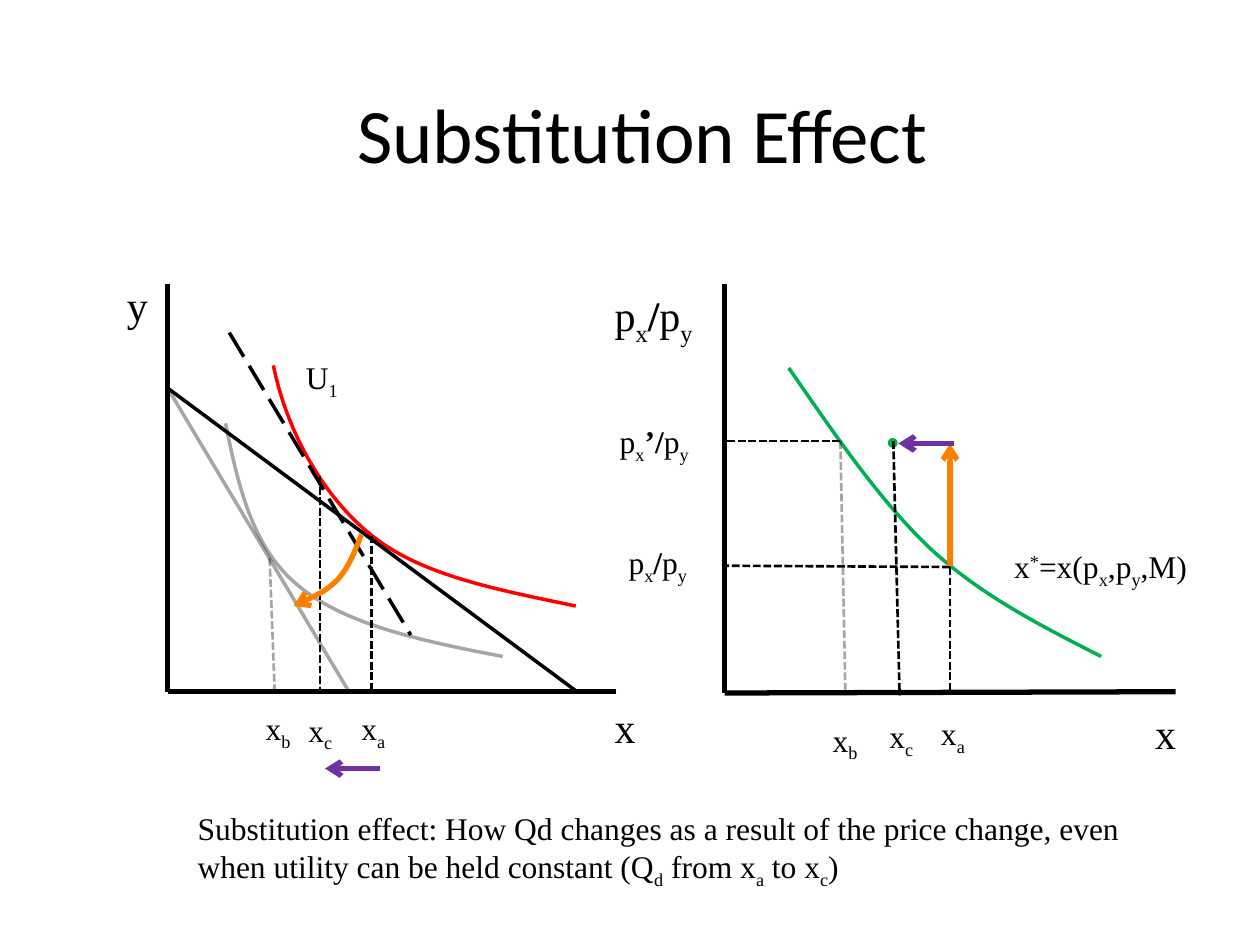
from dataclasses import dataclass
from typing import Optional

from lxml import etree
from pptx import Presentation
from pptx import util as u
from pptx.dml import color
from pptx.enum import dml, shapes, text
from pptx.oxml import ns


@dataclass(frozen=True)
class Theme:
    ink: str = "000000"
    utility: str = "FF0000"
    demand: str = "00B050"
    price: str = "FE7F00"
    quantity: str = "7030A0"
    heading_font: str = "Calibri"
    body_font: str = "Times New Roman"
    heading: int = 44
    axis: int = 24
    body: int = 18
    subscript: int = -25000
    superscript: int = 30000


THEME = Theme()
DOTS = dml.MSO_LINE.SQUARE_DOT
DASHES = dml.MSO_LINE.LONG_DASH


@dataclass(frozen=True)
class Stroke:
    color: str = THEME.ink
    width: float = 2
    dash: Optional[dml.MSO_LINE] = None
    opacity: int = 100
    arrow: bool = False


AXIS = Stroke(width=3)
PLAIN = Stroke()
FADED = Stroke(opacity=35)
GUIDE = Stroke(width=1.5, dash=DOTS)
FADED_GUIDE = Stroke(width=1.5, dash=DOTS, opacity=35)
COMPENSATED = Stroke(dash=DASHES)
UTILITY = Stroke(THEME.utility)
DEMAND = Stroke(THEME.demand)
PRICE_MOVE = Stroke(THEME.price, 3, arrow=True)
QUANTITY_MOVE = Stroke(THEME.quantity, 3, arrow=True)


@dataclass(frozen=True)
class Segment:
    start: tuple[float, float]
    end: tuple[float, float]
    stroke: Stroke


@dataclass(frozen=True)
class Curve:
    points: list[tuple[float, float]]
    stroke: Stroke


@dataclass(frozen=True)
class Label:
    markup: str
    left: float
    top: float
    width: float
    height: float = 0.4
    size: int = THEME.body
    wrap: bool = False


SEGMENTS = [
    Segment((1.33, 2.25), (1.33, 5.49), AXIS),
    Segment((4.89, 5.49), (1.33, 5.49), AXIS),
    Segment((5.75, 2.25), (5.75, 5.5), AXIS),
    Segment((9.33, 5.49), (5.75, 5.5), AXIS),
    Segment((1.33, 3.08), (4.58, 5.49), PLAIN),
    Segment((1.33, 3.08), (2.77, 5.49), FADED),
    Segment((2.95, 4.25), (2.95, 5.47), GUIDE),
    Segment((2.14, 4.43), (2.18, 5.49), FADED_GUIDE),
    Segment((7.54, 4.5), (7.54, 5.5), GUIDE),
    Segment((6.67, 3.5), (6.71, 5.52), FADED_GUIDE),
    Segment((6.67, 3.5), (5.75, 3.5), GUIDE),
    Segment((7.54, 4.5), (5.75, 4.49), GUIDE),
    Segment((7.54, 4.49), (7.54, 3.52), PRICE_MOVE),
    Segment((7.57, 3.52), (7.13, 3.52), QUANTITY_MOVE),
    Segment((3.02, 6.1), (2.58, 6.1), QUANTITY_MOVE),
    Segment((1.82, 2.64), (3.26, 5.04), COMPENSATED),
    Segment((2.54, 3.78), (2.54, 5.47), GUIDE),
    Segment((7.09, 3.5), (7.14, 5.52), GUIDE),
]

CURVES = [
    Curve([(1.79, 3.36), (1.89, 3.85), (2, 4.35), (2.37, 4.65),
           (2.74, 4.96), (3.36, 5.09), (3.99, 5.21)], FADED),
    Curve([(2.17, 2.9), (2.27, 3.4), (2.55, 3.93), (2.95, 4.25),
           (3.35, 4.57), (3.95, 4.68), (4.57, 4.81)], UTILITY),
    Curve([(6.26, 2.92), (6.62, 3.44), (6.97, 3.96), (7.38, 4.35),
           (7.79, 4.73), (8.27, 4.97), (8.74, 5.21)], DEMAND),
    Curve([(2.87, 4.24), (2.82, 4.37), (2.77, 4.5), (2.68, 4.6),
           (2.59, 4.69), (2.46, 4.75), (2.33, 4.81)], PRICE_MOVE),
]

LABELS = [
    Label("y", 0.91, 2.17, 0.37, 0.5, THEME.axis),
    Label("x", 4.78, 5.52, 0.3, 0.5, THEME.axis, True),
    Label("x", 9.07, 5.57, 0.38, 0.5, THEME.axis, True),
    Label("p|_x|!/|p|_y", 4.78, 2.25, 0.97, 0.5, THEME.axis, True),
    Label("p|_x|!/|p|_y", 4.89, 4.26, 0.76, wrap=True),
    Label("p|_x|!’/|p|_y", 4.82, 3.3, 0.83, wrap=True),
    Label("U|_1", 2.33, 2.79, 0.47),
    Label("x|^*|=x(p|_x|,p|_y|,M)", 7.95, 4.29, 1.61),
    Label("x|_b", 2.01, 5.58, 0.41),
    Label("x|_c", 2.35, 5.59, 0.4),
    Label("x|_a", 2.77, 5.58, 0.4),
    Label("x|_b", 6.51, 5.67, 0.41),
    Label("x|_c", 6.96, 5.64, 0.4),
    Label("x|_a", 7.37, 5.62, 0.4),
    Label("Substitution effect: How Qd changes as a result of the price change, "
          "even when utility can be held constant (Q|_d| from x|_a| to x|_c|)",
          1.47, 6.37, 7.6, 0.71, wrap=True),
]


def inches(*values: float) -> list[u.Length]:
    return [u.Cm(value * 2.54) for value in values]


def apply_stroke(shape, stroke: Stroke) -> None:
    shape.line.color.rgb = color.RGBColor.from_string(stroke.color)
    shape.line.width = u.Pt(stroke.width)
    if stroke.dash is not None:
        shape.line.dash_style = stroke.dash
    outline = shape._element.spPr.find(ns.qn("a:ln"))
    if stroke.opacity < 100:
        tint = outline.find(".//" + ns.qn("a:srgbClr"))
        etree.SubElement(tint, ns.qn("a:alpha"), val=str(stroke.opacity * 1000))
    if stroke.arrow:
        etree.SubElement(outline, ns.qn("a:tailEnd"), type="arrow")


def draw_segment(page, segment: Segment) -> None:
    line = page.shapes.add_connector(
        shapes.MSO_CONNECTOR.STRAIGHT, *inches(*segment.start, *segment.end))
    apply_stroke(line, segment.stroke)
    etree.SubElement(line._element.spPr, ns.qn("a:effectLst"))


def draw_curve(page, curve: Curve) -> None:
    start, *rest = [inches(*point) for point in curve.points]
    builder = page.shapes.build_freeform(*start)
    builder.add_line_segments(rest, close=False)
    shape = builder.convert_to_shape()
    outline = shape._element.spPr.find(".//" + ns.qn("a:path"))
    steps = outline.findall(ns.qn("a:lnTo"))
    for first in range(0, len(steps), 3):
        bend = etree.SubElement(outline, ns.qn("a:cubicBezTo"))
        for step in steps[first:first + 3]:
            bend.append(step[0])
            outline.remove(step)
    shape.fill.background()
    shape.shadow.inherit = False
    apply_stroke(shape, curve.stroke)


def draw_label(page, label: Label) -> None:
    box = page.shapes.add_textbox(
        *inches(label.left, label.top, label.width, label.height))
    frame = box.text_frame
    frame.word_wrap = label.wrap
    frame.auto_size = text.MSO_AUTO_SIZE.SHAPE_TO_FIT_TEXT
    para = frame.paragraphs[0]
    offsets = {"_": THEME.subscript, "^": THEME.superscript}
    for part in label.markup.split("|"):
        mark = part[0]
        span = para.add_run()
        span.text = part[1:] if mark in "_^!" else part
        style_span(span, THEME.body_font, label.size)
        if mark in offsets:
            span.font._element.set("baseline", str(offsets[mark]))
        if mark == "!":
            span.font.bold = True


def style_span(span, font: str, size: int) -> None:
    span.font.name = font
    span.font.size = u.Pt(size)
    span.font.color.rgb = color.RGBColor.from_string(THEME.ink)


def draw_title(page, title: str) -> None:
    frame = page.shapes.add_textbox(*inches(1.1, 0.33, 8, 1.44)).text_frame
    frame.word_wrap = True
    frame.vertical_anchor = text.MSO_ANCHOR.MIDDLE
    frame.text = title
    para = frame.paragraphs[0]
    para.alignment = text.PP_ALIGN.CENTER
    style_span(para.runs[0], THEME.heading_font, THEME.heading)


def draw_dot(page) -> None:
    dot = page.shapes.add_shape(shapes.MSO_SHAPE.OVAL, *inches(7.06, 3.49, 0.05, 0.05))
    dot.shadow.inherit = False
    dot.fill.solid()
    dot.fill.fore_color.rgb = color.RGBColor.from_string(THEME.demand)
    apply_stroke(dot, DEMAND)


def main() -> None:
    deck = Presentation()
    deck.slide_width, deck.slide_height = inches(10, 7.5)
    page = deck.slides.add_slide(deck.slide_layouts[6])
    draw_title(page, "Substitution Effect")
    for curve in CURVES[:-1]:
        draw_curve(page, curve)
    draw_dot(page)
    for segment in SEGMENTS:
        draw_segment(page, segment)
    draw_curve(page, CURVES[-1])
    for label in LABELS:
        draw_label(page, label)
    deck.save("out.pptx")


if __name__ == "__main__":
    main()
